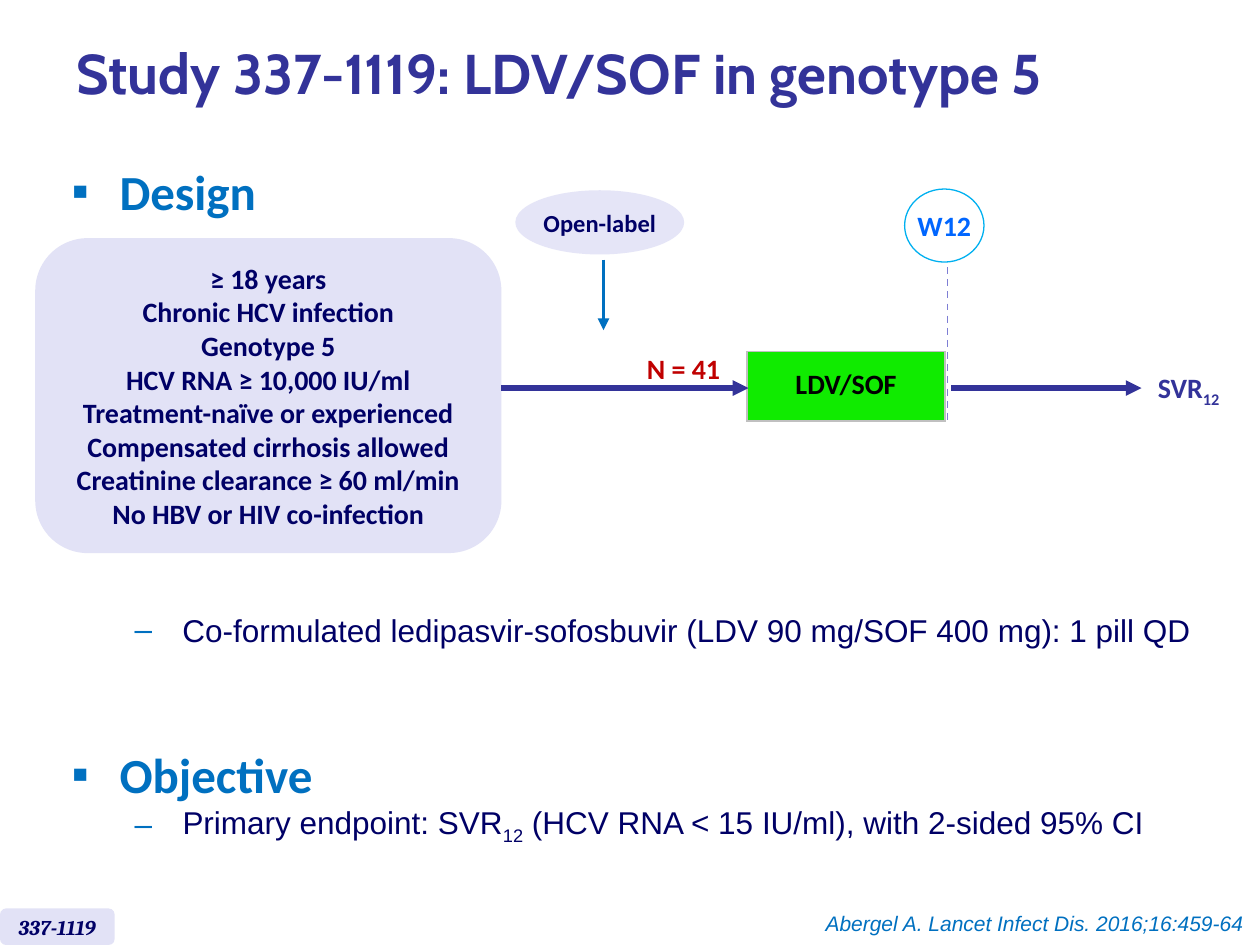
"""Build the study design slide for LDV/SOF in genotype 5."""
from dataclasses import dataclass
from typing import Optional

import pptx
import pptx.dml.color
import pptx.enum.dml
import pptx.enum.shapes
import pptx.enum.text
import pptx.oxml
import pptx.oxml.ns
import pptx.util

Inches = pptx.util.Inches
Pt = pptx.util.Pt
RGBColor = pptx.dml.color.RGBColor
Align = pptx.enum.text.PP_ALIGN
Anchor = pptx.enum.text.MSO_ANCHOR
Preset = pptx.enum.shapes.MSO_SHAPE

BLUE = RGBColor(0x00, 0x70, 0xC0)
NAVY = RGBColor(0x00, 0x00, 0x66)
INDIGO = RGBColor(0x33, 0x33, 0x99)
LAVENDER = RGBColor(0xE2, 0xE2, 0xF6)
PALE_LAVENDER = RGBColor(0xE5, 0xE5, 0xF7)
VIOLET = RGBColor(0x7E, 0x7E, 0xD4)
SKY = RGBColor(0x00, 0xB0, 0xF0)
WEEK_BLUE = RGBColor(0x00, 0x66, 0xFF)
RED = RGBColor(0xC0, 0x00, 0x00)
GREEN = RGBColor(0x10, 0xEB, 0x00)
SILVER = RGBColor(0xC0, 0xC0, 0xC0)
BLACK = RGBColor(0x00, 0x00, 0x00)
WHITE = RGBColor(0xFF, 0xFF, 0xFF)

ARM_Y = 3.08
HANGING = 0.38


@dataclass(frozen=True)
class Style:
    size: float
    color: RGBColor
    font: str = "Calibri"
    bold: bool = True
    italic: bool = False


@dataclass(frozen=True)
class Line:
    text: str
    style: Style
    bullet: str = ""
    indent: float = HANGING
    subscript: str = ""
    after: str = ""
    spacing: Optional[float] = None


@dataclass(frozen=True)
class Block:
    box: tuple[float, float, float, float]
    lines: list[Line]
    align: Align = Align.LEFT
    anchor: Anchor = Anchor.TOP
    wrap: bool = True
    margin: Optional[float] = None
    preset: Optional[Preset] = None
    fill: Optional[RGBColor] = None
    outline: Optional[RGBColor] = None


@dataclass(frozen=True)
class Rule:
    start: tuple[float, float]
    end: tuple[float, float]
    color: RGBColor
    width: float
    arrow: bool = True


HEADING = Style(28, BLUE)
DETAIL = Style(18, NAVY, "Arial", bold=False)
CRITERIA_STYLE = Style(16, NAVY)
CRITERIA = [
    "≥ 18 years",
    "Chronic HCV infection",
    "Genotype 5",
    "HCV RNA ≥ 10,000 IU/ml",
    "Treatment-naïve or experienced",
    "Compensated cirrhosis allowed",
    "Creatinine clearance ≥ 60 ml/min",
    "No HBV or HIV co-infection",
]

BLOCKS = [
    Block((0.51, 0.08, 9.13, 1.07),
          [Line("Study 337-1119: LDV/SOF in genotype 5", Style(32, INDIGO, "Cabin"), spacing=0.85)],
          anchor=Anchor.MIDDLE),
    Block((0.47, 1.23, 1.98, 0.63), [Line("Design", HEADING, "▪")]),
    Block((4.09, 1.51, 1.34, 0.51), [Line("Open-label", Style(14, NAVY))], Align.CENTER,
          Anchor.MIDDLE, wrap=False, margin=0, preset=Preset.OVAL, fill=PALE_LAVENDER),
    Block((7.18, 1.5, 0.63, 0.58), [Line("W12", Style(16, WEEK_BLUE))], Align.CENTER,
          Anchor.MIDDLE, wrap=False, preset=Preset.OVAL, fill=WHITE, outline=SKY),
    Block((0.28, 1.89, 3.7, 2.5), [Line(text, CRITERIA_STYLE) for text in CRITERIA], Align.CENTER,
          Anchor.MIDDLE, preset=Preset.ROUNDED_RECTANGLE, fill=LAVENDER),
    Block((5.03, 2.74, 0.79, 0.37), [Line("N = 41", Style(16, RED))], Align.CENTER, wrap=False),
    Block((9.09, 2.89, 0.72, 0.37), [Line("SVR", Style(16, INDIGO), subscript="12")], wrap=False),
    Block((0.97, 4.8, 8.83, 0.4),
          [Line("Co-formulated ledipasvir-sofosbuvir (LDV 90 mg/SOF 400 mg): 1 pill QD", DETAIL, "–")]),
    Block((0.47, 5.86, 9.02, 1.2),
          [Line("Objective", HEADING, "▪"),
           Line("Primary endpoint: SVR", DETAIL, "–", 0.88, "12",
                " (HCV RNA < 15 IU/ml), with 2-sided 95% CI")]),
    Block((5.79, 7.18, 4.18, 0.3),
          [Line("Abergel A. Lancet Infect Dis. 2016;16:459-64",
                Style(12, BLUE, "Arial", bold=False, italic=True))], Align.RIGHT),
    Block((0, 7.21, 0.91, 0.29), [Line("337-1119", Style(12, NAVY, "Cambria", italic=True))],
          Align.CENTER, Anchor.MIDDLE, wrap=False, preset=Preset.ROUNDED_RECTANGLE, fill=LAVENDER),
]

RULES = [
    Rule((4.79, 2.06), (4.79, 2.62), BLUE, 2.25),
    Rule((3.98, ARM_Y), (5.94, ARM_Y), INDIGO, 3),
    Rule((7.55, ARM_Y), (9.06, ARM_Y), INDIGO, 3),
    Rule((7.52, 2.12), (7.52, 3.34), VIOLET, 1, arrow=False),
]


def add_element(parent, tag: str, **attributes: str):
    """Append a DrawingML child element and return it."""
    element = pptx.oxml.parse_xml(f"<a:{tag} {pptx.oxml.ns.nsdecls('a')}/>")
    for name, value in attributes.items():
        element.set(name, value)
    parent.append(element)
    return element


def write_line(paragraph, line: Line, align: Align) -> None:
    """Write one paragraph with its bullet, spacing and runs."""
    paragraph.alignment = align
    if line.spacing:
        paragraph.line_spacing = line.spacing
    if line.bullet:
        properties = paragraph._p.get_or_add_pPr()
        properties.set("marL", str(Inches(line.indent)))
        properties.set("indent", str(-Inches(HANGING)))
        add_element(add_element(properties, "buClr"), "srgbClr", val=str(BLUE))
        add_element(properties, "buFont", typeface="Arial")
        add_element(properties, "buChar", char=line.bullet)
    for text, baseline in ((line.text, 0), (line.subscript, -25000), (line.after, 0)):
        if not text:
            continue
        run = paragraph.add_run()
        run.text = text
        run.font.name = line.style.font
        run.font.size = Pt(line.style.size)
        run.font.bold = line.style.bold
        run.font.italic = line.style.italic
        run.font.color.rgb = line.style.color
        if baseline:
            run._r.get_or_add_rPr().set("baseline", str(baseline))


def draw_block(slide, block: Block) -> None:
    """Draw a text box or a filled shape holding text."""
    box = [Inches(length) for length in block.box]
    if block.preset is None:
        shape = slide.shapes.add_textbox(*box)
    else:
        shape = slide.shapes.add_shape(block.preset, *box)
        shape.shadow.inherit = False
        shape.fill.solid()
        shape.fill.fore_color.rgb = block.fill
        if block.outline is None:
            shape.line.fill.background()
        else:
            shape.line.color.rgb = block.outline
            shape.line.width = Pt(0.75)
    frame = shape.text_frame
    frame.word_wrap = block.wrap
    frame.vertical_anchor = block.anchor
    if block.margin is not None:
        frame.margin_left = frame.margin_right = Inches(block.margin)
        frame.margin_top = frame.margin_bottom = Inches(block.margin)
    for index, line in enumerate(block.lines):
        paragraph = frame.add_paragraph() if index else frame.paragraphs[0]
        write_line(paragraph, line, block.align)


def draw_rule(slide, rule: Rule) -> None:
    """Draw an arrow or a dashed line."""
    points = [Inches(length) for length in rule.start + rule.end]
    connector = slide.shapes.add_connector(pptx.enum.shapes.MSO_CONNECTOR.STRAIGHT, *points)
    connector.line.color.rgb = rule.color
    connector.line.width = Pt(rule.width)
    if rule.arrow:
        add_element(connector.line._get_or_add_ln(), "tailEnd", type="triangle")
    else:
        connector.line.dash_style = pptx.enum.dml.MSO_LINE.DASH
    add_element(connector._element.spPr, "effectLst")


def draw_treatment(slide) -> None:
    """Draw the one-cell treatment table."""
    box = [Inches(length) for length in (5.93, 2.79, 1.57, 0.55)]
    table = slide.shapes.add_table(1, 1, *box).table
    table.first_row = table.horz_banding = False
    cell = table.cell(0, 0)
    cell.vertical_anchor = Anchor.MIDDLE
    properties = cell._tc.get_or_add_tcPr()
    for side in ("lnL", "lnR", "lnT", "lnB"):
        border = add_element(properties, side, w=str(Pt(1)))
        add_element(add_element(border, "solidFill"), "srgbClr", val=str(SILVER))
    cell.fill.solid()
    cell.fill.fore_color.rgb = GREEN
    label = Line("LDV/SOF", Style(16, BLACK), spacing=0.8)
    write_line(cell.text_frame.paragraphs[0], label, Align.CENTER)


def main() -> None:
    """Build and save the slide."""
    presentation = pptx.Presentation()
    presentation.slide_width = Inches(10)
    presentation.slide_height = Inches(7.5)
    slide = presentation.slides.add_slide(presentation.slide_layouts[6])
    draw_treatment(slide)
    for block in BLOCKS:
        draw_block(slide, block)
    for rule in RULES:
        draw_rule(slide, rule)
    presentation.save("out.pptx")


if __name__ == "__main__":
    main()
